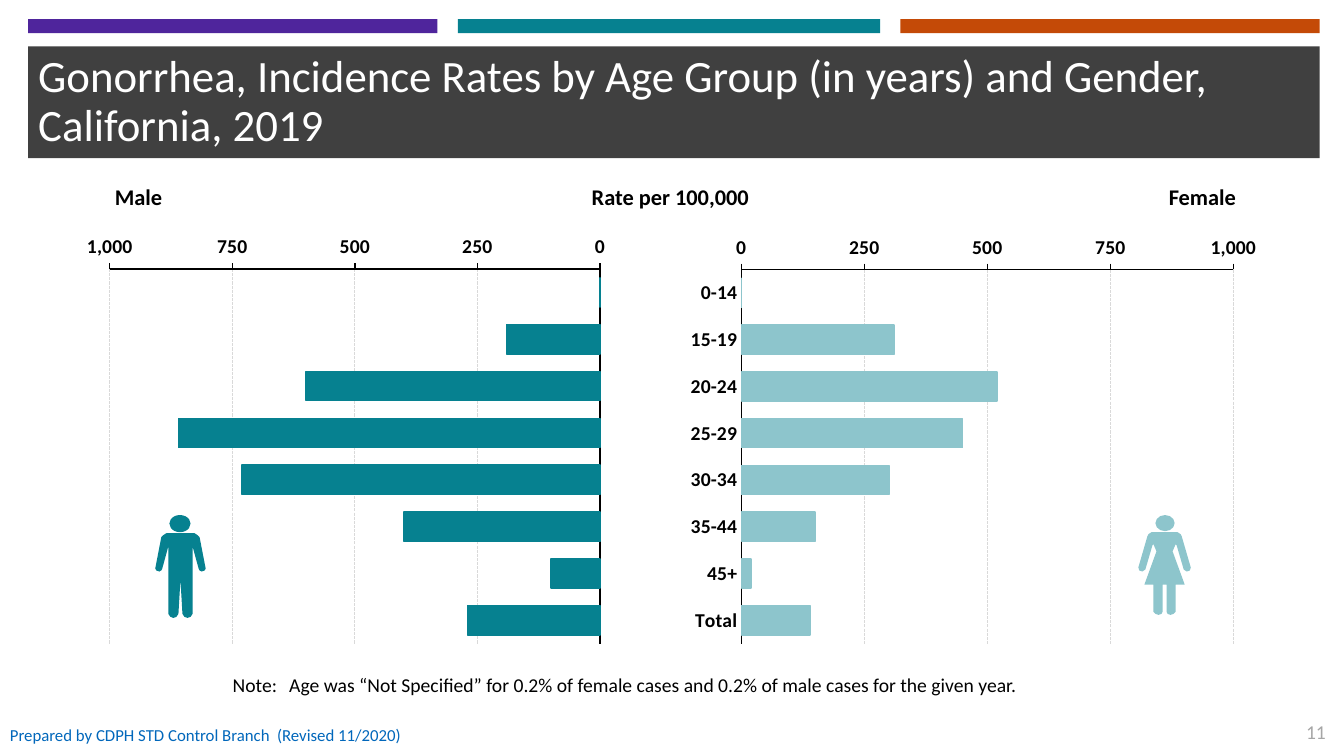
from lxml import etree
from pptx import Presentation
from pptx.chart.data import CategoryChartData
from pptx.dml.color import RGBColor
from pptx.enum.chart import XL_CHART_TYPE as ChartType
from pptx.enum.chart import XL_TICK_LABEL_POSITION as LabelPosition
from pptx.enum.chart import XL_TICK_MARK as TickMark
from pptx.enum.dml import MSO_LINE_DASH_STYLE as Dash
from pptx.enum.shapes import MSO_SHAPE as Preset
from pptx.enum.text import MSO_ANCHOR as Anchor
from pptx.enum.text import PP_ALIGN as Align
from pptx.oxml import parse_xml
from pptx.oxml.ns import nsdecls, qn
from pptx.util import Pt

PX = 9144  # 100 px to the inch
FONT = "Calibri"
COLORS = {
    "white": "FFFFFF", "black": "000000", "title": "404040", "purple": "4F259C",
    "orange": "C44A07", "male": "068190", "female": "8DC5CC",
    "grid": "D9D9D9", "number": "A6A6A6", "footer": "0167BB",
}

# Content: boxes are (left, top, width, height)
STRIPES = [
    ((28, 19, 406, 14), "purple"),
    ((454, 19, 419, 14), "male"),
    ((893, 19, 416, 14), "orange"),
]
TITLE = "Gonorrhea, Incidence Rates by Age Group (in years) and Gender, California, 2019"
TITLE_BOX = (28, 46, 1281, 111)
HEADINGS = "Male\tRate per 100,000\tFemale"
HEADING_TABS = [(551, "ctr"), (1112, "r")]
NOTE = ("\tNote:\tAge was “Not Specified” for 0.2% of female cases "
        "and 0.2% of male cases for the given year.")
NOTE_TABS = [(69, "r"), (81, "l")]
FOOTERS = [
    ("Prepared by CDPH STD Control Branch", (0, 709, 280, 40)),
    ("(Revised 11/2020)", (265, 709, 150, 40)),
]
AGE_GROUPS = ["0-14", "15-19", "20-24", "25-29", "30-34", "35-44", "45+", "Total"]
CHARTS = [
    {"color": "male", "box": (50, 210, 601, 438), "plot": (0.098, 0.13, 0.809, 0.849),
     "categories": [str(n + 1) for n in range(len(AGE_GROUPS))], "mirrored": True,
     "rates": [0, 190, 600, 860, 730, 400, 100, 270]},
    {"color": "female", "box": (626, 210, 650, 438), "plot": (0.168, 0.131, 0.751, 0.848),
     "categories": AGE_GROUPS, "mirrored": False,
     "rates": [0, 310, 520, 450, 300, 150, 20, 140]},
]
# Right half of each body as (distance from axis, y); the left half mirrors it
FIGURES = [
    {"color": "male", "head": (168, 511, 21, 17), "axis": 179,
     "half": [(14, 529), (17, 531), (19, 533), (25, 564), (24, 566), (21, 567),
              (19, 566), (18, 564), (12, 542), (12, 609), (10, 612), (7, 613),
              (4, 612), (2, 609), (0, 575)]},
    {"color": "female", "head": (1146, 511, 19, 16), "axis": 1155,
     "half": [(13, 528), (16, 530), (17, 532), (26, 563), (25, 566), (22, 567),
              (19, 565), (12, 541), (11, 540), (8, 547), (20, 580), (11, 580),
              (11, 607), (9, 609), (6, 610), (3, 609), (2, 607), (2, 580)]},
]

presentation = Presentation()
presentation.slide_width, presentation.slide_height = 1333 * PX, 750 * PX
slide = presentation.slides.add_slide(presentation.slide_layouts[6])
shapes = slide.shapes


def emu(box):
    return [value * PX for value in box]


def rgb(name):
    return RGBColor.from_string(COLORS[name])


def set_font(font, size, color, bold=False):
    font.name, font.size, font.bold = FONT, Pt(size), bold
    font.color.rgb = rgb(color)


def paint(shape, color):
    shape.shadow.inherit = False
    shape.fill.solid()
    shape.fill.fore_color.rgb = rgb(color)
    shape.line.fill.background()
    return shape


def write(shape, text, size, color, bold=False, anchor=Anchor.TOP,
          align=Align.LEFT, wrap=True, tabs=()):
    frame = shape.text_frame
    frame.word_wrap = wrap
    frame.vertical_anchor = anchor
    paragraph = frame.paragraphs[0]
    paragraph.text = text
    paragraph.alignment = align
    if tabs:
        properties = paragraph._p.get_or_add_pPr()
        tab_list = etree.SubElement(properties, qn("a:tabLst"))
        for position, kind in tabs:
            etree.SubElement(tab_list, qn("a:tab"), pos=str(position * PX), algn=kind)
    set_font(paragraph.font, size, color, bold)
    return paragraph


def add_text(box, *args, **options):
    return write(shapes.add_textbox(*emu(box)), *args, **options)


def style_axis_line(axis):
    axis.format.line.color.rgb = rgb("black")
    axis.format.line.width = Pt(1)
    axis.minor_tick_mark = TickMark.NONE


def white_area():
    return parse_xml(
        f'<c:spPr {nsdecls("c", "a")}><a:solidFill><a:srgbClr val="{COLORS["white"]}"/>'
        '</a:solidFill><a:ln><a:noFill/></a:ln></c:spPr>')


def add_rate_chart(content):
    data = CategoryChartData()
    data.categories = content["categories"]
    data.add_series("Series 1", content["rates"])
    chart = shapes.add_chart(ChartType.BAR_CLUSTERED, *emu(content["box"]), data).chart
    chart.has_legend = chart.has_title = False
    set_font(chart.font, 18, "black", True)
    chart.font.name = "Times New Roman"

    # Bars
    plot = chart.plots[0]
    plot.gap_width, plot.vary_by_categories = 60, False
    series = plot.series[0]
    series.invert_if_negative = False
    series.format.fill.solid()
    series.format.fill.fore_color.rgb = rgb(content["color"])
    series.format.line.color.rgb = rgb(content["color"])
    series.format.line.width = Pt(1)

    # Axes
    ages, rates = chart.category_axis, chart.value_axis
    for axis in (ages, rates):
        style_axis_line(axis)
        set_font(axis.tick_labels.font, 14, "black", True)
    ages.reverse_order = True
    ages.major_tick_mark = TickMark.NONE
    ages.has_major_gridlines = False
    if content["mirrored"]:
        ages.tick_label_position = LabelPosition.NONE
    rates.reverse_order = content["mirrored"]
    rates.major_tick_mark = TickMark.OUTSIDE
    rates.minimum_scale, rates.maximum_scale, rates.major_unit = 0, 1000, 250
    rates.tick_labels.number_format = "#,##0"
    rates.tick_labels.number_format_is_linked = False
    rates.has_major_gridlines = True
    grid = rates.major_gridlines.format.line
    grid.color.rgb, grid.width, grid.dash_style = rgb("grid"), Pt(0.75), Dash.SQUARE_DOT

    # Fixed inner plot area and white backgrounds
    chart_element = chart.element.find(qn("c:chart"))
    plot_area = chart_element.find(qn("c:plotArea"))
    for layout in plot_area.findall(qn("c:layout")):
        plot_area.remove(layout)
    parts = '<c:layoutTarget val="inner"/><c:xMode val="edge"/><c:yMode val="edge"/>'
    parts += "".join(f'<c:{key} val="{value}"/>' for key, value in zip("xywh", content["plot"]))
    plot_area.insert(0, parse_xml(
        f'<c:layout {nsdecls("c")}><c:manualLayout>{parts}</c:manualLayout></c:layout>'))
    plot_area.append(white_area())
    chart_element.addnext(white_area())


def add_figure(figure):
    axis, half = figure["axis"], figure["half"]
    outline = [(axis + x, y) for x, y in half]
    outline += [(axis - x, y) for x, y in reversed(half)]
    builder = shapes.build_freeform(*outline[0], scale=PX)
    builder.add_line_segments(outline[1:], close=True)
    paint(builder.convert_to_shape(), figure["color"])
    paint(shapes.add_shape(Preset.OVAL, *emu(figure["head"])), figure["color"])


# Stripes and title bar
for box, color in STRIPES:
    paint(shapes.add_shape(Preset.RECTANGLE, *emu(box)), color)
title_bar = paint(shapes.add_shape(Preset.RECTANGLE, *emu(TITLE_BOX)), "title")
write(title_bar, TITLE, 32, "white", anchor=Anchor.MIDDLE).line_spacing = 0.9

# Headings, charts and figures
add_text((104, 177, 1140, 37), HEADINGS, 16, "black", bold=True, tabs=HEADING_TABS)
for content, figure in zip(CHARTS, FIGURES):
    add_rate_chart(content)
    add_figure(figure)

# Note, footer and slide number
add_text((196, 663, 939, 34), NOTE, 14, "black", tabs=NOTE_TABS)
for text, box in FOOTERS:
    add_text(box, text, 12, "footer", anchor=Anchor.MIDDLE)
add_text((1282, 709, 43, 34), "11", 14, "number", align=Align.RIGHT, wrap=False)

presentation.save("out.pptx")
